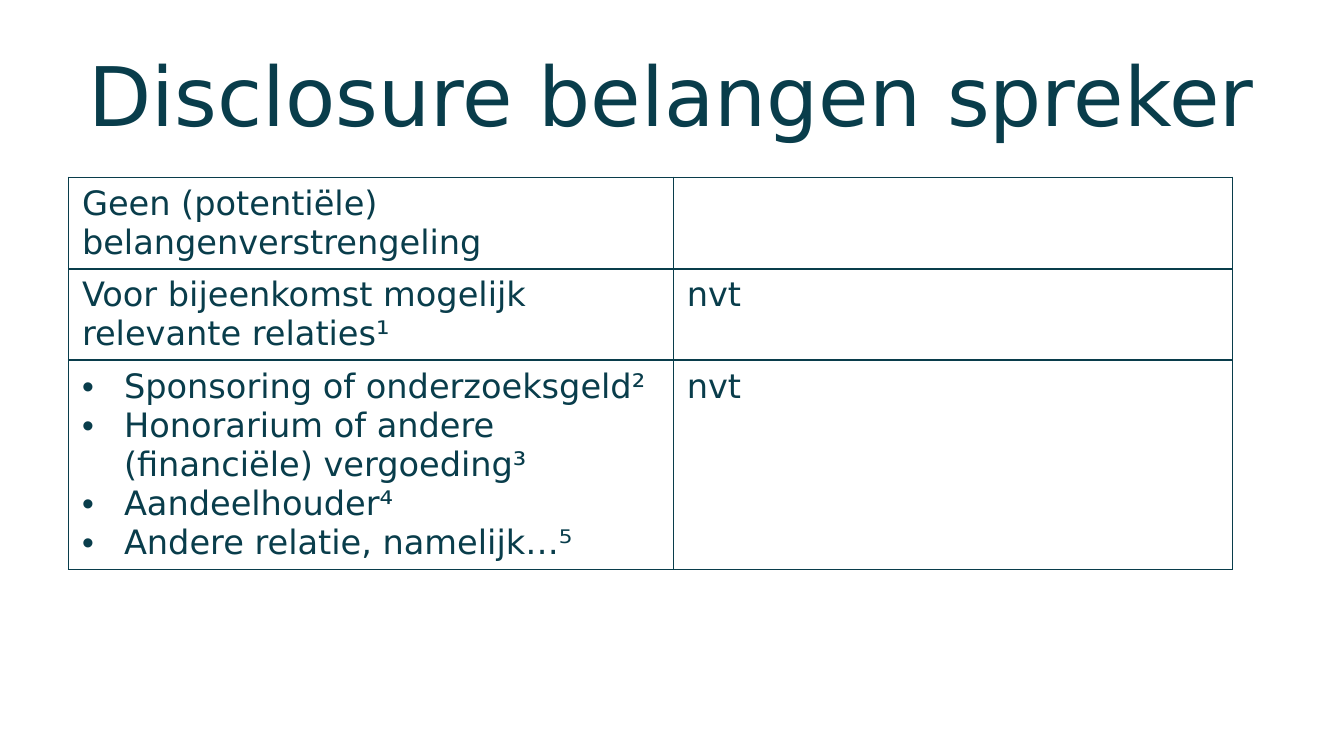
"""Build the speaker disclosure slide with its table of interests."""
import dataclasses
import typing

import pptx
import pptx.dml.color
import pptx.enum.text
import pptx.oxml
import pptx.oxml.ns
import pptx.util

Pt = pptx.util.Pt


@dataclasses.dataclass(frozen=True)
class Theme:
    """Colours, typeface and sizes of the slide."""

    ink: str = "093D4B"
    typeface: str = "DejaVu Sans"
    title_size: float = 44
    body_size: float = 18
    border: float = 1
    bullet_indent: float = 22.5


class Interest(typing.NamedTuple):
    """One row of the disclosure table."""

    topics: tuple[str, ...]
    answer: str
    height: float
    bulleted: bool = False


THEME = Theme()
COLUMN_WIDTHS = (324, 299.5)
INTERESTS = (
    Interest(("Geen (potentiële)", "belangenverstrengeling"), "", 49),
    Interest(("Voor bijeenkomst mogelijk", "relevante relaties¹"), "nvt", 49),
    Interest(
        (
            "Sponsoring of onderzoeksgeld²",
            "Honorarium of andere (financiële) vergoeding³",
            "Aandeelhouder⁴",
            "Andere relatie, namelijk…⁵",
        ),
        "nvt",
        112,
        True,
    ),
)


def apply_format(target: typing.Any, values: dict[str, typing.Any]) -> None:
    """Set every named value on the target."""
    for name, value in values.items():
        setattr(target, name, value)


def style_text(paragraph: typing.Any, size: float) -> None:
    """Give all runs of a paragraph the theme font."""
    for run in paragraph.runs:
        apply_format(run.font, {"name": THEME.typeface, "size": Pt(size), "bold": False})
        run.font.color.rgb = pptx.dml.color.RGBColor.from_string(THEME.ink)


def add_bullet(paragraph: typing.Any) -> None:
    """Give a paragraph a hanging bullet."""
    properties = paragraph._p.get_or_add_pPr()
    indent = int(Pt(THEME.bullet_indent))
    properties.set("marL", str(indent))
    properties.set("indent", str(-indent))
    namespace = pptx.oxml.ns.nsdecls("a")
    properties.append(pptx.oxml.parse_xml(f'<a:buFont {namespace} typeface="Arial"/>'))
    properties.append(pptx.oxml.parse_xml(f'<a:buChar {namespace} char="•"/>'))


def add_borders(cell: typing.Any) -> None:
    """Draw a thin line on all four sides of a cell."""
    properties = cell._tc.get_or_add_tcPr()
    for position, side in enumerate(("lnL", "lnR", "lnT", "lnB")):
        line = pptx.oxml.parse_xml(
            f'<a:{side} {pptx.oxml.ns.nsdecls("a")} w="{int(Pt(THEME.border))}">'
            f'<a:solidFill><a:srgbClr val="{THEME.ink}"/></a:solidFill></a:{side}>'
        )
        properties.insert(position, line)


def fill_cell(cell: typing.Any, lines: tuple[str, ...], bulleted: bool = False) -> None:
    """Write one paragraph per line into a bordered, unfilled cell."""
    cell.fill.background()
    add_borders(cell)
    cell.text_frame.text = "\n".join(lines)
    for paragraph in cell.text_frame.paragraphs:
        if bulleted:
            add_bullet(paragraph)
        style_text(paragraph, THEME.body_size)


def place_title(slide: typing.Any, wording: str) -> None:
    """Position and format the title placeholder."""
    heading = slide.shapes.title
    apply_format(
        heading, {"left": Pt(36), "top": Pt(16.5), "width": Pt(648), "height": Pt(67.5)}
    )
    heading.text_frame.text = wording
    apply_format(
        heading.text_frame,
        {
            "word_wrap": True,
            "auto_size": pptx.enum.text.MSO_AUTO_SIZE.NONE,
            "vertical_anchor": pptx.enum.text.MSO_ANCHOR.MIDDLE,
        },
    )
    paragraph = heading.text_frame.paragraphs[0]
    paragraph.alignment = pptx.enum.text.PP_ALIGN.CENTER
    style_text(paragraph, THEME.title_size)


def add_interests(slide: typing.Any, interests: tuple[Interest, ...]) -> None:
    """Add the table of interests and answers."""
    disclosure = slide.shapes.add_table(
        len(interests),
        len(COLUMN_WIDTHS),
        Pt(36.75),
        Pt(95),
        Pt(sum(COLUMN_WIDTHS)),
        Pt(sum(interest.height for interest in interests)),
    ).table
    apply_format(disclosure, {"first_row": False, "horz_banding": False})
    for column, width in zip(disclosure.columns, COLUMN_WIDTHS):
        column.width = Pt(width)
    for row, interest in zip(disclosure.rows, interests):
        row.height = Pt(interest.height)
        topic_cell, answer_cell = row.cells
        fill_cell(topic_cell, interest.topics, interest.bulleted)
        fill_cell(answer_cell, (interest.answer,))


def main() -> None:
    """Build and save the presentation."""
    presentation = pptx.Presentation()
    apply_format(presentation, {"slide_width": Pt(720), "slide_height": Pt(405)})
    slide = presentation.slides.add_slide(presentation.slide_layouts[5])
    place_title(slide, "Disclosure belangen spreker")
    add_interests(slide, INTERESTS)
    presentation.save("out.pptx")


if __name__ == "__main__":
    main()
